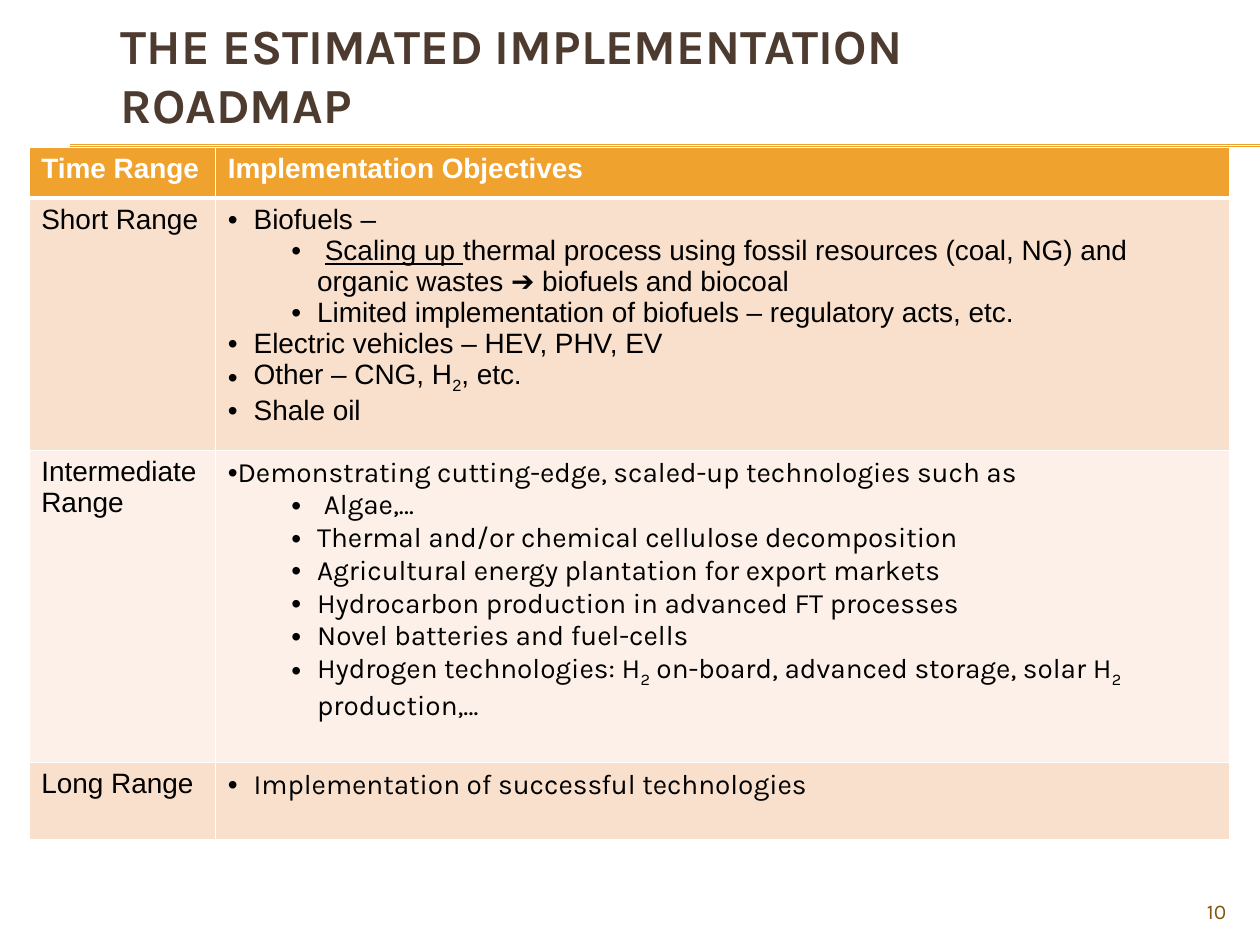
from lxml import etree
from pptx import Presentation
from pptx.dml.color import RGBColor
from pptx.enum.shapes import MSO_CONNECTOR
from pptx.enum.text import MSO_ANCHOR, PP_ALIGN
from pptx.oxml.ns import qn
from pptx.util import Cm, Pt

LEFT, RIGHT = PP_ALIGN.LEFT, PP_ALIGN.RIGHT
MIDDLE = MSO_ANCHOR.MIDDLE
STRAIGHT = MSO_CONNECTOR.STRAIGHT

GOLD, PEACH, CREAM = "F0A22E", "F9E0CD", "FCF0E8"
WHITE, BLACK, BROWN, OCHRE = "FFFFFF", "000000", "4E3B30", "85540A"
SUB = {"base": -25000}
LINE = {"under": True}
FLUSH, TOP, DEEP = (0, 0, 0), (0, 0.52, -0.52), (1, 1.8, -0.52)

SHORT = [
    (TOP, ["Biofuels –"]),
    (DEEP, [" ", ("Scaling up ", LINE),
            "thermal process using fossil resources (coal, NG) and "
            "organic wastes ➔ biofuels and biocoal"]),
    (DEEP, ["Limited implementation of biofuels – regulatory acts, etc."]),
    (TOP, ["Electric vehicles – HEV, PHV, EV"]),
    (TOP, ["Other – CNG, H", ("2", SUB), ", etc."]),
    (TOP, ["Shale oil"]),
]
MEDIUM = [
    (FLUSH, ["Demonstrating cutting-edge, scaled-up technologies such as"]),
    (DEEP, [" Algae,…"]),
    (DEEP, ["Thermal and/or chemical cellulose decomposition"]),
    (DEEP, ["Agricultural energy plantation for export markets"]),
    (DEEP, ["Hydrocarbon production in advanced FT processes"]),
    (DEEP, ["Novel batteries and fuel-cells"]),
    (DEEP, ["Hydrogen technologies: H", ("2", SUB),
            " on-board, advanced storage, solar H", ("2 ", SUB),
            "production,…"]),
]
LONG = [(TOP, ["Implementation of successful technologies"])]

# label, objectives, font of objectives, fill, row height
ROWS = [
    ("Short Range", SHORT, "Arial", PEACH, 4.73),
    ("Intermediate Range", MEDIUM, "Karla", CREAM, 6.29),
    ("Long Range", LONG, "Karla", PEACH, 1.56),
]


def rgb(code):
    return RGBColor.from_string(code)


def write(par, text, size=16, font="Arial", color=BLACK, bold=False,
          under=False, base=0):
    run = par.add_run()
    run.text = text
    face = run.font
    face.size, face.name = Pt(size), font
    face.bold, face.underline = bold, under
    face.color.rgb = rgb(color)
    if base:
        run._r.get_or_add_rPr().set("baseline", str(base))


def bullet(par, level, margin, indent):
    par.level = level
    props = par._p.get_or_add_pPr()
    props.set("marL", str(Cm(margin)))
    props.set("indent", str(Cm(indent)))
    face = etree.SubElement(props, qn("a:buFont"))
    face.set("typeface", "Arial")
    etree.SubElement(props, qn("a:buChar")).set("char", "•")


def border(cell, **widths):
    """Draw white edges; widths are points keyed by L, R, T or B."""
    props = cell._tc.get_or_add_tcPr()
    for side in "LRTB":
        edge = etree.SubElement(props, qn("a:ln" + side))
        edge.set("w", str(Pt(widths.get(side, 1))))
        fill = etree.SubElement(edge, qn("a:solidFill"))
        etree.SubElement(fill, qn("a:srgbClr")).set("val", WHITE)


class Deck:
    def __init__(self):
        self.show = Presentation()
        self.show.slide_width, self.show.slide_height = Cm(25.4), Cm(19.05)
        self.slide = self.show.slides.add_slide(self.show.slide_layouts[5])

    def rule(self, y):
        line = self.slide.shapes.add_connector(
            STRAIGHT, Cm(1.42), Cm(y), Cm(25.4), Cm(y))
        line.line.color.rgb = rgb(GOLD)
        line.line.width = Pt(0.75)
        etree.SubElement(line._element.spPr, qn("a:effectLst"))

    def title(self, text):
        box = self.slide.shapes.title
        box.left, box.top = Cm(2.18), Cm(0.41)
        box.width, box.height = Cm(20.45), Cm(2.18)
        frame = box.text_frame
        frame.word_wrap, frame.vertical_anchor = True, MIDDLE
        par = frame.paragraphs[0]
        par.alignment = LEFT
        write(par, text, size=28, font="Karla", color=BROWN, bold=True)

    def number(self, text):
        box = self.slide.shapes.add_textbox(
            Cm(22.86), Cm(17.98), Cm(2.11), Cm(0.69))
        box.text_frame.word_wrap = True
        par = box.text_frame.paragraphs[0]
        par.alignment = RIGHT
        write(par, text, size=12, font="Karla", color=OCHRE)

    def table(self, heads, rows):
        heights = [1.02] + [row[-1] for row in rows]
        grid = self.slide.shapes.add_table(
            len(heights), 2, Cm(0.58), Cm(2.97),
            Cm(24.21), Cm(sum(heights))).table
        for col, width in zip(grid.columns, (3.76, 20.45)):
            col.width = Cm(width)
        for row, height in zip(grid.rows, heights):
            row.height = Cm(height)
        for col, head in enumerate(heads):
            par = self.cell(grid.cell(0, col), GOLD, B=3).paragraphs[0]
            write(par, head, color=WHITE, bold=True)
        for at, (label, items, font, fill, _) in enumerate(rows, 1):
            edge = {"T": 3} if at == 1 else {}
            frame = self.cell(grid.cell(at, 0), fill, **edge)
            write(frame.paragraphs[0], label)
            frame = self.cell(grid.cell(at, 1), fill, **edge)
            self.items(frame, items, font)

    def cell(self, cell, fill, **edge):
        border(cell, **edge)
        cell.fill.solid()
        cell.fill.fore_color.rgb = rgb(fill)
        return cell.text_frame

    def items(self, frame, items, font):
        for at, (style, runs) in enumerate(items):
            par = frame.add_paragraph() if at else frame.paragraphs[0]
            bullet(par, *style)
            for run in runs:
                text, form = (run, {}) if isinstance(run, str) else run
                write(par, text, font=font, **form)


def main():
    deck = Deck()
    for y in (2.92, 2.95):
        deck.rule(y)
    deck.title("THE ESTIMATED IMPLEMENTATION ROADMAP")
    deck.number("10")
    deck.table(("Time Range", "Implementation Objectives"), ROWS)
    deck.show.save("out.pptx")


if __name__ == "__main__":
    main()
